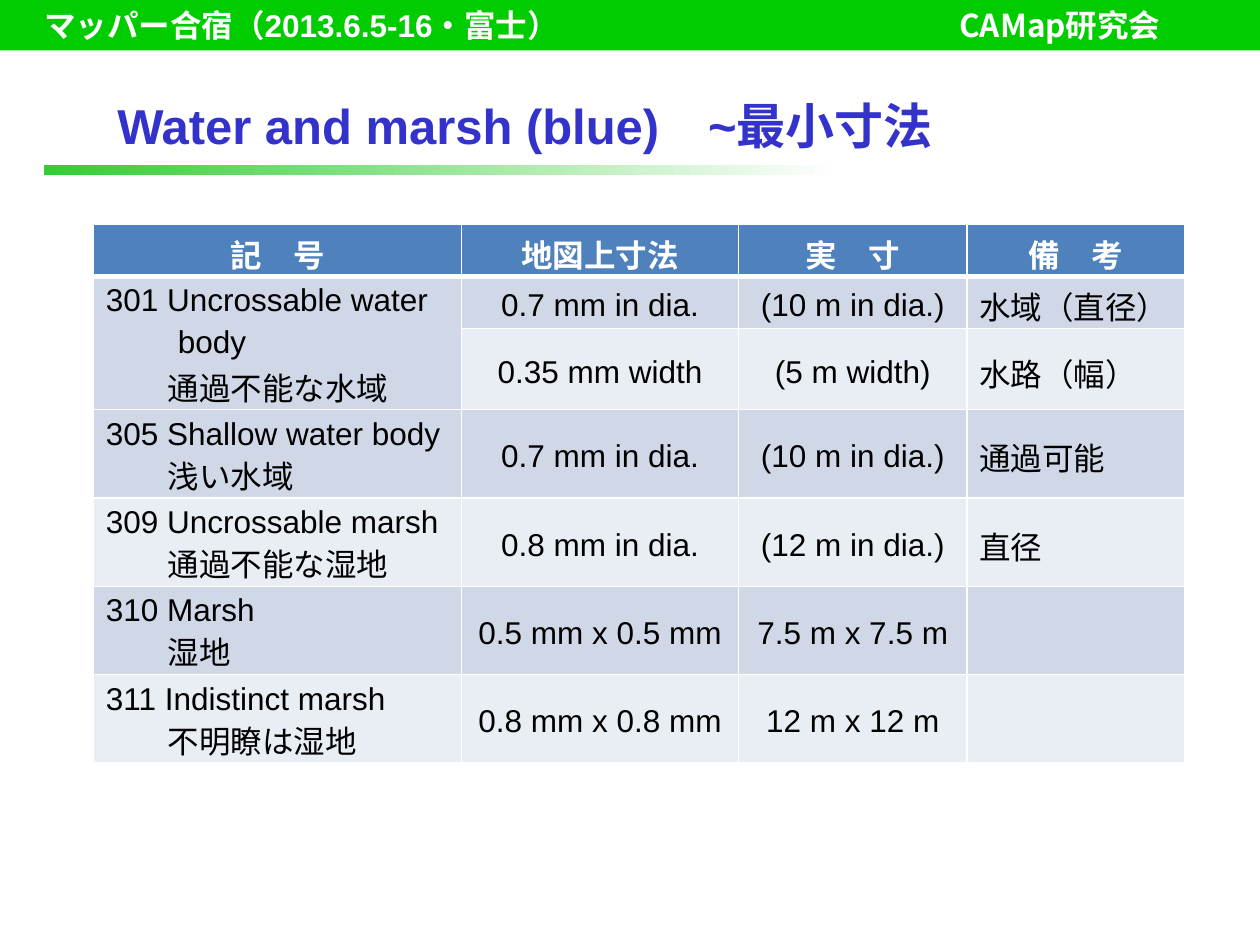
from dataclasses import dataclass

from lxml.etree import SubElement
from pptx import Presentation
from pptx.dml.color import RGBColor
from pptx.enum.shapes import MSO_SHAPE as Shape
from pptx.enum.text import MSO_ANCHOR as Anchor, PP_ALIGN as Align
from pptx.oxml import parse_xml
from pptx.oxml.ns import nsdecls, qn
from pptx.util import Cm, Pt

WHITE = RGBColor(0xFF, 0xFF, 0xFF)
BLACK = RGBColor(0x00, 0x00, 0x00)
TITLE_BLUE = RGBColor(0x33, 0x33, 0xCC)
BAND_GREEN = RGBColor(0x00, 0xCC, 0x00)
RULE_GREEN = RGBColor(0x33, 0xCC, 0x33)
HEADER_BLUE = RGBColor(0x4F, 0x81, 0xBD)
ROW_DARK = RGBColor(0xD0, 0xD8, 0xE8)
ROW_LIGHT = RGBColor(0xE9, 0xED, 0xF4)

LATIN = "Arial"
JAPANESE = "Noto Sans CJK JP"
HEADER_FONT = "Calibri"

COLUMN_WIDTHS = (7.42, 5.59, 4.6, 4.39)
ROW_HEIGHTS = (1.04, 1.04, 1.5) + (1.78,) * 4
HEADINGS = ("記　号", "地図上寸法", "実　寸", "備　考")


@dataclass(frozen=True)
class Line:
    text: str
    indent: float = 0
    before: float = 0
    after: float = 0


@dataclass(frozen=True)
class Row:
    symbol: tuple[Line, ...]
    map_size: str
    real_size: str
    note: str = ""


def named(english: str, japanese: str) -> tuple[Line, ...]:
    return Line(english), Line(japanese, indent=1.25)


ROWS = (
    Row((Line("301 Uncrossable water"), Line("body", 1.45, 4, 2),
         Line("通過不能な水域", 1.25)),
        "0.7 mm in dia.", "(10 m in dia.)", "水域（直径）"),
    Row((), "0.35 mm width", "(5 m width)", "水路（幅）"),
    Row(named("305 Shallow water body", "浅い水域"),
        "0.7 mm in dia.", "(10 m in dia.)", "通過可能"),
    Row(named("309 Uncrossable marsh", "通過不能な湿地"),
        "0.8 mm in dia.", "(12 m in dia.)", "直径"),
    Row(named("310 Marsh", "湿地"), "0.5 mm x 0.5 mm", "7.5 m x 7.5 m"),
    Row(named("311 Indistinct marsh", "不明瞭は湿地"), "0.8 mm x 0.8 mm", "12 m x 12 m"),
)


def apply(target, **values) -> None:
    for name, value in values.items():
        setattr(target, name, value)


def add_run(paragraph, text: str, color: RGBColor, latin: str = LATIN,
            size: int = 18, bold: bool = False) -> None:
    run = paragraph.add_run()
    run.text = text
    apply(run.font, name=latin, size=Pt(size), bold=bold)
    run.font.color.rgb = color
    SubElement(run.font._element, qn("a:ea"), typeface=JAPANESE)


def add_bar(slide, left: float, top: float, width: float, height: float):
    bar = slide.shapes.add_shape(Shape.RECTANGLE, Cm(left), Cm(top), Cm(width), Cm(height))
    bar.shadow.inherit = False
    bar.line.fill.background()
    return bar


def add_band(slide) -> None:
    band = add_bar(slide, 0, 0, 25.4, 1.02)
    band.fill.solid()
    band.fill.fore_color.rgb = BAND_GREEN
    apply(band.text_frame, margin_left=Cm(0.89), margin_top=0, margin_bottom=0,
          vertical_anchor=Anchor.MIDDLE, word_wrap=True)
    paragraph = band.text_frame.paragraphs[0]
    paragraph.alignment = Align.LEFT
    tabs = SubElement(paragraph._p.get_or_add_pPr(), qn("a:tabLst"))
    SubElement(tabs, qn("a:tab"), pos=str(Cm(18.45)), algn="l")
    for text, latin in (("マッパー合宿（", JAPANESE), ("2013.6.5-16", LATIN),
                        ("・富士）\tCAMap研究会", JAPANESE)):
        add_run(paragraph, text, WHITE, latin, bold=True)


def add_title(slide) -> None:
    title = slide.shapes.title
    apply(title, left=Cm(2.11), top=Cm(1.52), width=Cm(19.99), height=Cm(2.01))
    apply(title.text_frame, vertical_anchor=Anchor.MIDDLE, word_wrap=True)
    paragraph = title.text_frame.paragraphs[0]
    paragraph.alignment = Align.LEFT
    add_run(paragraph, "Water and marsh (blue)　~最小寸法", TITLE_BLUE, size=28, bold=True)


def add_rule(slide) -> None:
    rule = add_bar(slide, 0.89, 3.33, 16, 0.2)
    rule.fill.gradient()
    rule.fill.gradient_angle = 0
    for stop, color in zip(rule.fill.gradient_stops, (RULE_GREEN, WHITE)):
        stop.color.rgb = color


def set_borders(cell, top: int, bottom: int) -> None:
    properties = cell._tc.get_or_add_tcPr()
    for index, (side, width) in enumerate((("L", 1), ("R", 1), ("T", top), ("B", bottom))):
        properties.insert(index, parse_xml(
            f'<a:ln{side} {nsdecls("a")} w="{Pt(width)}"><a:solidFill>'
            f'<a:srgbClr val="{WHITE}"/></a:solidFill></a:ln{side}>'))


def format_cell(cell, fill: RGBColor, anchor, top: int = 1, bottom: int = 1) -> None:
    apply(cell, margin_bottom=0, vertical_anchor=anchor)
    cell.fill.solid()
    cell.fill.fore_color.rgb = fill
    set_borders(cell, top, bottom)


def write_lines(cell, lines: tuple[Line, ...], alignment) -> None:
    frame = cell.text_frame
    for index, line in enumerate(lines):
        paragraph = frame.add_paragraph() if index else frame.paragraphs[0]
        apply(paragraph, alignment=alignment, space_before=Pt(line.before),
              space_after=Pt(line.after))
        if line.indent:
            paragraph._p.get_or_add_pPr().set("marL", str(Cm(line.indent)))
        add_run(paragraph, line.text, BLACK)


def add_size_table(slide) -> None:
    table = slide.shapes.add_table(
        len(ROW_HEIGHTS), len(COLUMN_WIDTHS), Cm(1.88), Cm(4.53),
        Cm(sum(COLUMN_WIDTHS)), Cm(sum(ROW_HEIGHTS))).table
    for column, width in zip(table.columns, COLUMN_WIDTHS):
        column.width = Cm(width)
    for table_row, height in zip(table.rows, ROW_HEIGHTS):
        table_row.height = Cm(height)

    for cell, heading in zip(table.rows[0].cells, HEADINGS):
        format_cell(cell, HEADER_BLUE, Anchor.TOP, bottom=3)
        paragraph = cell.text_frame.paragraphs[0]
        paragraph.alignment = Align.CENTER
        add_run(paragraph, heading, WHITE, HEADER_FONT, bold=True)

    alignments = (Align.LEFT, Align.CENTER, Align.CENTER, Align.LEFT)
    for index, row in enumerate(ROWS, start=1):
        fill = ROW_DARK if index % 2 else ROW_LIGHT
        sizes = (row.map_size, row.real_size, row.note)
        contents = (row.symbol, *((Line(text),) if text else () for text in sizes))
        for cell, lines, alignment in zip(table.rows[index].cells, contents, alignments):
            format_cell(cell, fill, Anchor.MIDDLE, top=3 if index == 1 else 1)
            write_lines(cell, lines, alignment)
    table.cell(1, 0).merge(table.cell(2, 0))


def main() -> None:
    presentation = Presentation()
    apply(presentation, slide_width=Cm(25.4), slide_height=Cm(19.05))
    slide = presentation.slides.add_slide(presentation.slide_layouts[5])
    add_title(slide)
    add_rule(slide)
    add_band(slide)
    add_size_table(slide)
    presentation.save("out.pptx")


if __name__ == "__main__":
    main()
